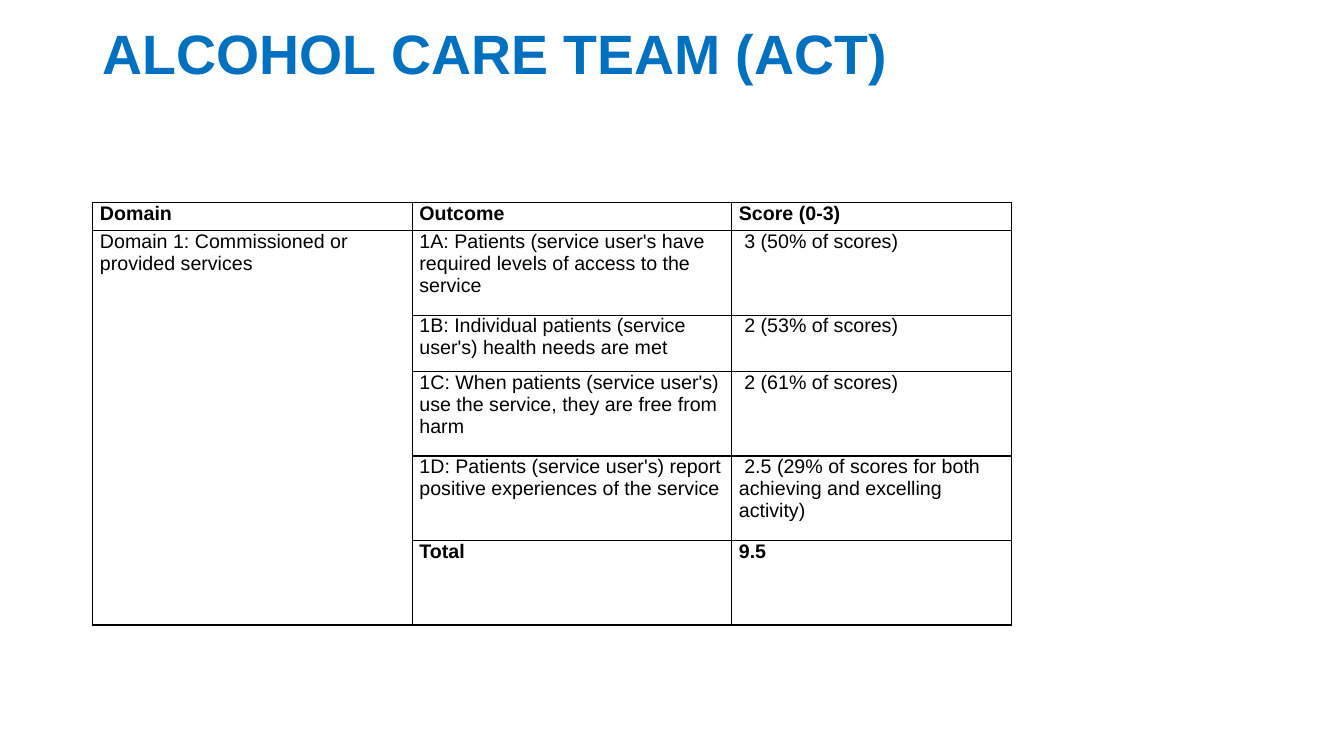
from lxml.etree import SubElement
from pptx import Presentation
from pptx.dml.color import RGBColor
from pptx.enum.text import MSO_ANCHOR, MSO_AUTO_SIZE, PP_ALIGN
from pptx.oxml.ns import qn
from pptx.util import Cm, Pt

BLUE = RGBColor(0x00, 0x70, 0xC0)
BLACK = RGBColor(0x00, 0x00, 0x00)

HEADINGS = ["Domain", "Outcome", "Score (0-3)"]
DOMAIN = "Domain 1: Commissioned or provided services"
OUTCOMES = [
    ("1A: Patients (service user's have required levels of access to the service",
     " 3 (50% of scores)"),
    ("1B: Individual patients (service user's) health needs are met",
     " 2 (53% of scores)"),
    ("1C: When patients (service user's) use the service, they are free from harm",
     " 2 (61% of scores)"),
    ("1D: Patients (service user's) report positive experiences of the service",
     " 2.5 (29% of scores for both achieving and excelling activity)"),
]
TOTAL = ("Total", "9.5")
COLUMN_WIDTHS = [8.05, 8.05, 7.06]
ROW_HEIGHTS = [0.71, 2.13, 1.42, 2.13, 2.13, 2.13]


class SlideBuilder:
    """Holds the style and the current slide."""

    font_name = "Arial"

    def __init__(self, slide):
        self.slide = slide

    def style(self, paragraph, size, color, bold):
        font = paragraph.font
        font.name, font.size, font.bold = self.font_name, Pt(size), bold
        font.color.rgb = color

    def title(self, text, left, top, width, height):
        box = self.slide.shapes.title
        box.left, box.top, box.width, box.height = map(Cm, (left, top, width, height))
        frame = box.text_frame
        frame.text = text
        frame.auto_size = MSO_AUTO_SIZE.NONE
        frame.vertical_anchor = MSO_ANCHOR.TOP
        frame.margin_top = 0
        paragraph = frame.paragraphs[0]
        paragraph.alignment = PP_ALIGN.LEFT
        paragraph.line_spacing = 0.9
        self.style(paragraph, 39.6, BLUE, True)

    def table(self, rows, left, top, widths, heights):
        frame = self.slide.shapes.add_table(
            len(rows), len(widths), Cm(left), Cm(top), Cm(sum(widths)), Cm(sum(heights)))
        table = frame.table
        table.first_row = table.horz_banding = False
        for column, width in zip(table.columns, widths):
            column.width = Cm(width)
        for row, height in zip(table.rows, heights):
            row.height = Cm(height)
        for row_index, texts in enumerate(rows):
            bold = row_index in (0, len(rows) - 1)
            for column_index, text in enumerate(texts):
                self.cell(table.cell(row_index, column_index), text,
                          bold and text != DOMAIN)
        return table

    def cell(self, cell, text, bold):
        cell.margin_left = cell.margin_right = Cm(0.18)
        cell.margin_top = cell.margin_bottom = 0
        cell.text = text
        self.style(cell.text_frame.paragraphs[0], 14, BLACK, bold)
        # Borders come before the fill in the cell properties
        properties = cell._tc.get_or_add_tcPr()
        for side in ("a:lnL", "a:lnR", "a:lnT", "a:lnB"):
            line = SubElement(properties, qn(side), w=str(Pt(1)))
            fill = SubElement(line, qn("a:solidFill"))
            SubElement(fill, qn("a:srgbClr"), val=str(BLACK))
        cell.fill.background()


def main():
    deck = Presentation()
    deck.slide_width, deck.slide_height = Cm(33.87), Cm(19.05)
    title_only = deck.slide_layouts[5]
    builder = SlideBuilder(deck.slides.add_slide(title_only))

    # Title
    builder.title("ALCOHOL CARE TEAM (ACT)", 2.34, 0.66, 29.21, 4.04)

    # Outcome scores, with one domain cell beside all outcomes
    rows = [HEADINGS] + [["", *pair] for pair in [*OUTCOMES, TOTAL]]
    rows[1][0] = DOMAIN
    table = builder.table(rows, 2.34, 5.1, COLUMN_WIDTHS, ROW_HEIGHTS)
    table.cell(1, 0).merge(table.cell(len(rows) - 1, 0))

    deck.save("out.pptx")


if __name__ == "__main__":
    main()
